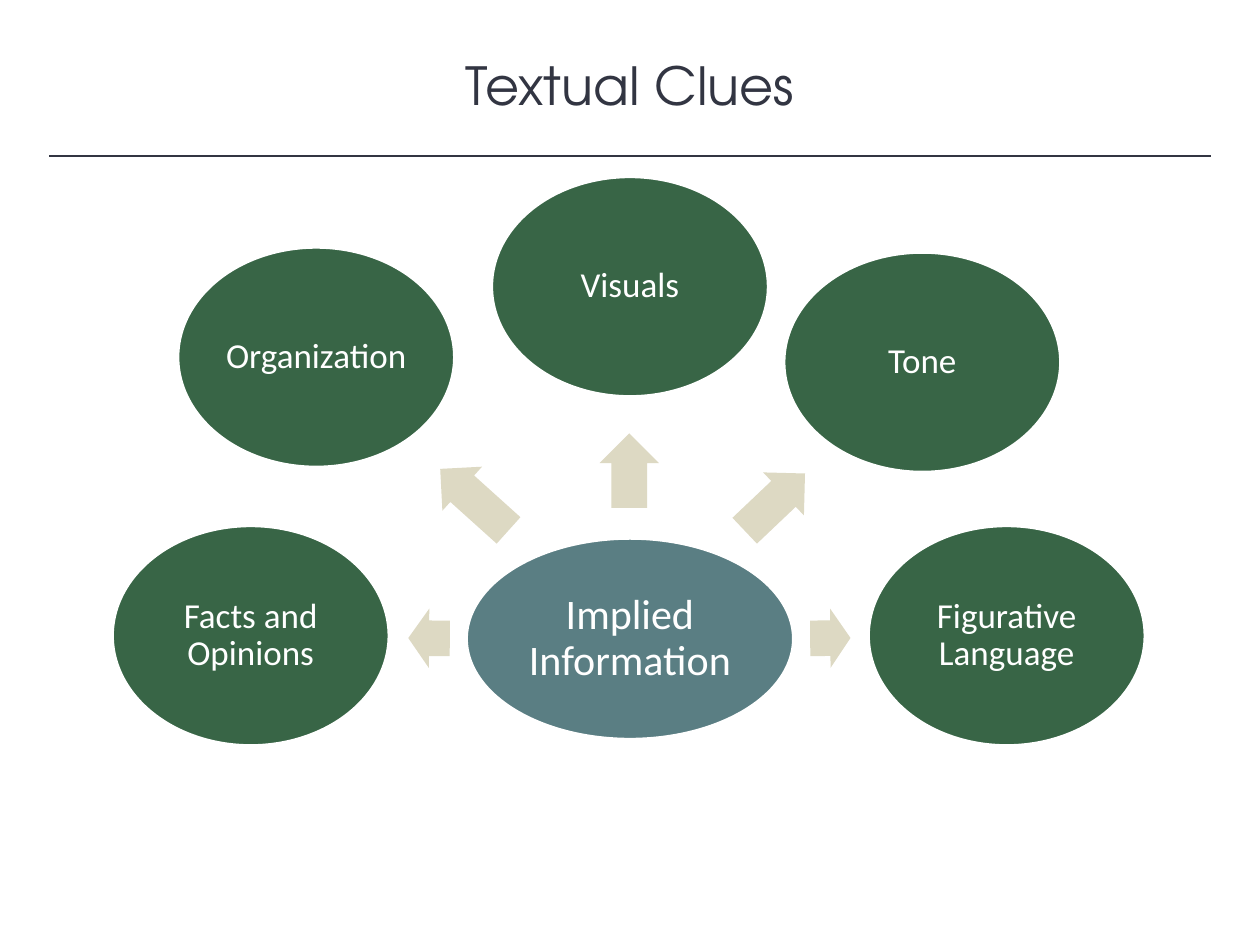
from collections import namedtuple

from lxml.etree import SubElement
from pptx import Presentation
from pptx.dml.color import RGBColor
from pptx.enum.shapes import MSO_CONNECTOR, MSO_SHAPE
from pptx.enum.text import MSO_ANCHOR, PP_ALIGN
from pptx.oxml.ns import qn
from pptx.util import Inches, Pt

COLORS = {"ink": "323542", "hub": "5A7E83", "clue": "386546", "arrow": "DDD9C3", "white": "FFFFFF"}
Box = namedtuple("Box", "left top width height")
Clue = namedtuple("Clue", "text left top arrow_left arrow_top arrow_length angle")

CLUES = [
    Clue("Visuals", 3.01, 0, 3.81, 2.1, 0.59, 270),
    Clue("Tone", 5.33, 0.6, 4.93, 2.35, 0.66, 316.5),
    Clue("Figurative Language", 6, 2.77, 5.54, 3.43, 0.32, 359.5),
    Clue("Facts and Opinions", 0, 2.77, 2.35, 3.43, 0.33, 180.5),
    Clue("Organization", 0.52, 0.56, 2.51, 2.33, 0.73, 222),
]


def color(name):
    """Return the named palette colour."""
    return RGBColor.from_string(COLORS[name])


def lengths(box):
    """Return the four measures of a box as lengths."""
    return [Inches(value) for value in box]


def within(box, left, top, width, height):
    """Return a box placed relative to the corner of another."""
    return Box(box.left + left, box.top + top, width, height)


def write_text(shape, text, size, font="Calibri", ink="white", spacing=None,
               anchor=MSO_ANCHOR.MIDDLE, margin=None):
    """Write one centred paragraph into a shape."""
    frame = shape.text_frame
    frame.word_wrap = True
    frame.vertical_anchor = anchor
    if margin is not None:
        frame.margin_left = frame.margin_right = Inches(margin)
        frame.margin_top = frame.margin_bottom = Inches(margin)
    para = frame.paragraphs[0]
    para.alignment = PP_ALIGN.CENTER
    para.line_spacing = spacing
    span = para.add_run()
    span.text = text
    span.font.name = font
    span.font.size = Pt(size)
    span.font.color.rgb = color(ink)


def add_oval(page, box, text, fill, size):
    """Add a filled oval with a white outline and centred text."""
    oval = page.shapes.add_shape(MSO_SHAPE.OVAL, *lengths(box))
    oval.shadow.inherit = False
    oval.fill.solid()
    oval.fill.fore_color.rgb = color(fill)
    oval.line.color.rgb = color("white")
    oval.line.width = Pt(2)
    write_text(oval, text, size, spacing=0.9, margin=0.03)


def add_arrow(page, box, angle):
    """Add a block arrow turned to the given angle."""
    arrow = page.shapes.add_shape(MSO_SHAPE.RIGHT_ARROW, *lengths(box))
    arrow.shadow.inherit = False
    arrow.adjustments[0] = 0.6
    arrow.adjustments[1] = 0.5
    arrow.rotation = angle
    arrow.fill.solid()
    arrow.fill.fore_color.rgb = color("arrow")
    arrow.line.fill.background()


def add_header(page, box, text):
    """Add the title with a rule along the bottom of the box."""
    title = page.shapes.add_textbox(*lengths(Box(box.left, box.top, box.width, 0.61)))
    write_text(title, text, 30, font="TeX Gyre Adventor", ink="ink", anchor=MSO_ANCHOR.TOP)
    inset = 0.39
    bottom = Inches(box.top + box.height)
    rule = page.shapes.add_connector(
        MSO_CONNECTOR.STRAIGHT, Inches(box.left + inset), bottom,
        Inches(box.left + box.width - inset), bottom)
    rule.line.color.rgb = color("ink")
    rule.line.width = Pt(1)
    SubElement(rule._element.spPr, qn("a:effectLst"))


def add_clue_diagram(page, box):
    """Add the hub with its ring of clues and outward arrows."""
    add_oval(page, within(box, 2.81, 2.87, 2.6, 1.6), "Implied Information", "hub", 24)
    for clue in CLUES:
        add_arrow(page, within(box, clue.arrow_left, clue.arrow_top, clue.arrow_length, 0.47),
                  clue.angle)
        add_oval(page, within(box, clue.left, clue.top, 2.2, 1.75), clue.text, "clue", 20)


def main():
    """Build and save the deck."""
    deck = Presentation()
    deck.slide_width, deck.slide_height = Inches(10), Inches(7.5)
    page = deck.slides.add_slide(deck.slide_layouts[6])
    add_header(page, Box(0, 0.37, 10, 0.87), "Textual Clues")
    add_clue_diagram(page, Box(0.89, 1.4, 8.2, 4.52))
    deck.save("out.pptx")


if __name__ == "__main__":
    main()
